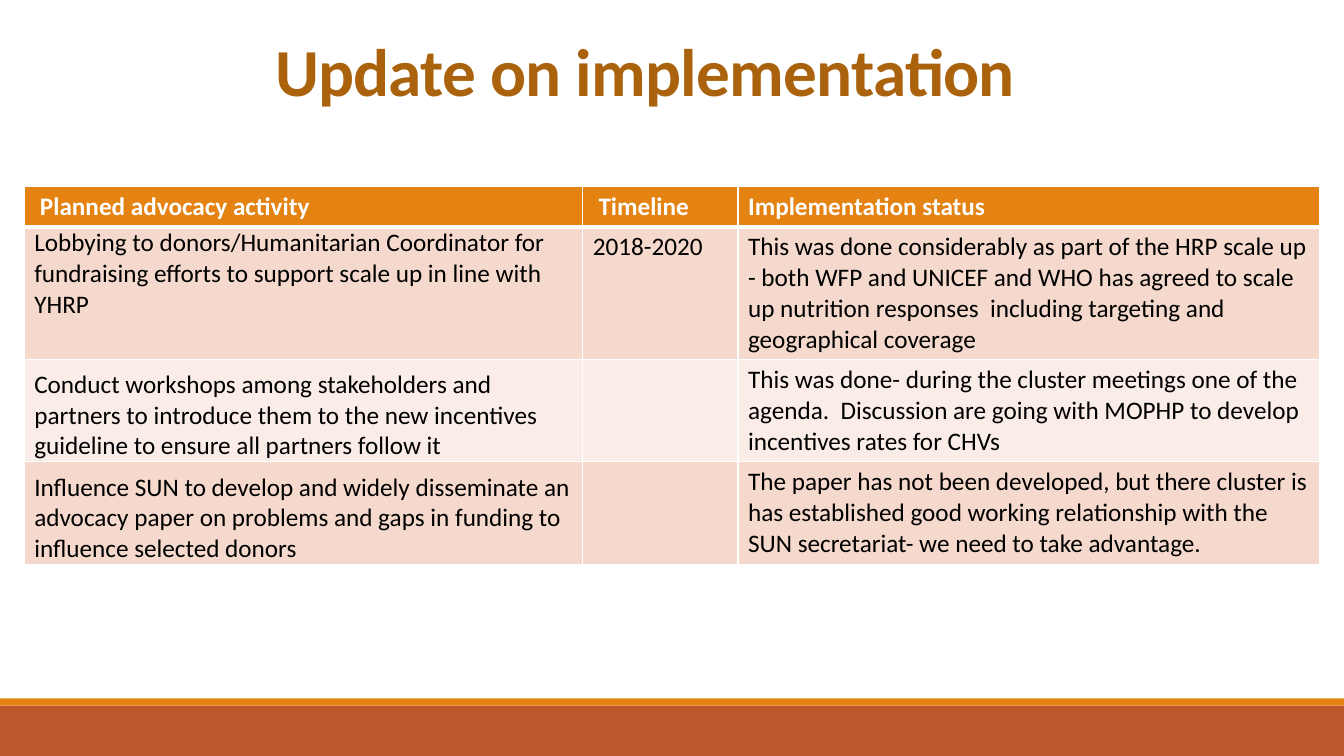
from lxml import etree
from pptx import Presentation
from pptx.dml.color import RGBColor
from pptx.enum.shapes import MSO_SHAPE
from pptx.enum.text import MSO_ANCHOR
from pptx.oxml.ns import qn
from pptx.util import Inches, Pt

RECT = MSO_SHAPE.RECTANGLE
TOP, BOTTOM = MSO_ANCHOR.TOP, MSO_ANCHOR.BOTTOM
FONT = "Calibri"
COLORS = {
    "white": "FFFFFF",
    "black": "000000",
    "title": "AB620D",
    "orange": "E48312",
    "rust": "BD582C",
    "band_dark": "F5D9CC",
    "band_light": "FAEDE7",
}
COL_WIDTHS = [5.54, 1.54, 5.77]
ROW_HEIGHTS = [0.4, 1.32, 1.01, 1.02]
ROW_FILLS = ["orange", "band_dark", "band_light", "band_dark"]
ACTIVITY_ANCHORS = [TOP, TOP, BOTTOM, BOTTOM]
ROWS = [
    [" Planned advocacy activity", " Timeline", "Implementation status"],
    [
        "Lobbying to donors/Humanitarian Coordinator for fundraising efforts to support scale up in line with YHRP",
        "2018-2020",
        "This was done considerably as part of the HRP scale up - both WFP and UNICEF and WHO has agreed to scale up nutrition responses  including targeting and geographical coverage",
    ],
    [
        "Conduct workshops among stakeholders and partners to introduce them to the new incentives guideline to ensure all partners follow it",
        "",
        "This was done- during the cluster meetings one of the agenda.  Discussion are going with MOPHP to develop incentives rates for CHVs",
    ],
    [
        "Influence SUN to develop and widely disseminate an advocacy paper on problems and gaps in funding to influence selected donors",
        "",
        "The paper has not been developed, but there cluster is has established good working relationship with the SUN secretariat- we need to take advantage.",
    ],
]


def rgb(name):
    return RGBColor.from_string(COLORS[name])


def style_text(p, size, color, bold):
    for r in p.runs:
        r.font.name = FONT
        r.font.size = Pt(size)
        r.font.bold = bold
        r.font.color.rgb = rgb(color)


prs = Presentation()
prs.slide_width = Inches(13.33)
prs.slide_height = Inches(7.5)
s = prs.slides.add_slide(prs.slide_layouts[6])

for top, height, color in [(7, 0.5, "rust"), (6.93, 0.07, "orange")]:
    sp = s.shapes.add_shape(RECT, 0, Inches(top), prs.slide_width, Inches(height))
    sp.shadow.inherit = False
    sp.fill.solid()
    sp.fill.fore_color.rgb = rgb(color)
    sp.line.fill.background()

sp = s.shapes.add_textbox(Inches(2.63), Inches(0.21), Inches(8.58), Inches(0.93))
tf = sp.text_frame
tf.word_wrap = True
tf.vertical_anchor = BOTTOM
p = tf.paragraphs[0]
p.text = "Update on implementation"
p.line_spacing = 0.85
style_text(p, 48, "title", True)
p.runs[0]._r.get_or_add_rPr().set("spc", "-50")

table = s.shapes.add_table(
    len(ROWS), len(COL_WIDTHS), Inches(0.24), Inches(1.85),
    Inches(sum(COL_WIDTHS)), Inches(sum(ROW_HEIGHTS)),
).table
for column, width in zip(table.columns, COL_WIDTHS):
    column.width = Inches(width)

for i, texts in enumerate(ROWS):
    table.rows[i].height = Inches(ROW_HEIGHTS[i])
    header = i == 0
    for j, text in enumerate(texts):
        cell = table.cell(i, j)
        cell.fill.solid()
        cell.fill.fore_color.rgb = rgb(ROW_FILLS[i])
        p = cell.text_frame.paragraphs[0]
        p.text = text
        p.font.size = Pt(18)
        style_text(p, 18, "white" if header else "black", header)
        if j == 0 and not header:
            cell.vertical_anchor = ACTIVITY_ANCHORS[i]
            cell.margin_left = cell.margin_right = cell.margin_top = Inches(0.01)
            cell.margin_bottom = 0
            p._p.get_or_add_pPr().set("marL", str(Inches(0.09)))
        tcPr = cell._tc.get_or_add_tcPr()
        for k, side in enumerate(["lnL", "lnR", "lnT", "lnB"]):
            thick = (header and side == "lnB") or (i == 1 and side == "lnT")
            ln = etree.Element(qn(f"a:{side}"), w=str(Pt(3 if thick else 1)))
            fill = etree.SubElement(ln, qn("a:solidFill"))
            etree.SubElement(fill, qn("a:srgbClr"), val=COLORS["white"])
            tcPr.insert(k, ln)

prs.save("out.pptx")
